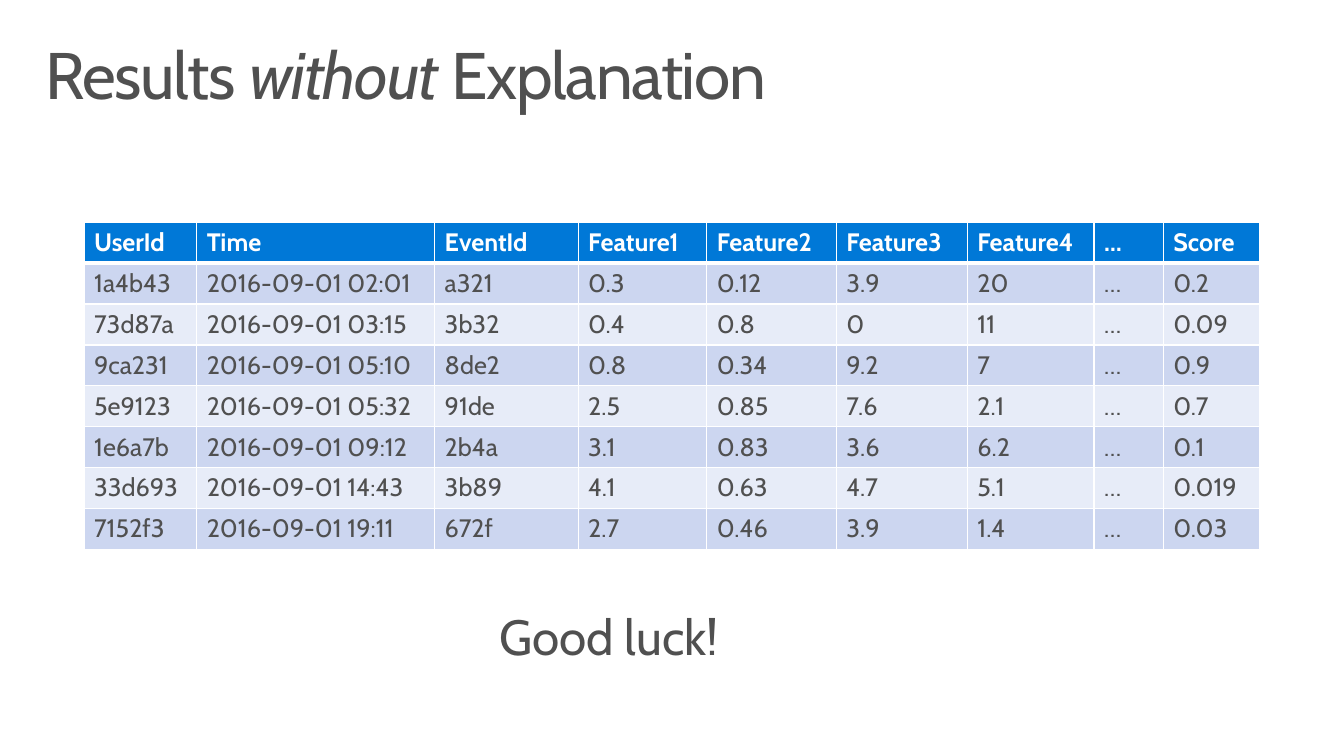
import pptx
import pptx.dml.color
import pptx.enum.text
import pptx.oxml.ns
import pptx.util
from lxml import etree

Pt = pptx.util.Pt
RGB = pptx.dml.color.RGBColor.from_string
qn = pptx.oxml.ns.qn

FONT = "Cabin"
COLORS = {"text": "505050", "header": "0078D7", "white": "FFFFFF",
          "band_dark": "CCD6F0", "band_light": "E7ECF8"}


def add_run(p, text, size, color="text", bold=False, italic=False):
    r = p.add_run()
    r.text = text
    r.font.name = FONT
    r.font.size = Pt(size)
    r.font.bold = bold
    r.font.italic = italic
    r.font.color.rgb = RGB(COLORS[color])
    return r


def set_placeholder(sp, left, top, width, height):
    """Place a placeholder and return its left-aligned first paragraph."""
    sp.left, sp.top, sp.width, sp.height = Pt(left), Pt(top), Pt(width), Pt(height)
    tf = sp.text_frame
    tf.word_wrap = True
    tf.auto_size = pptx.enum.text.MSO_AUTO_SIZE.NONE
    tf.vertical_anchor = pptx.enum.text.MSO_ANCHOR.TOP
    tf.margin_left = tf.margin_right = Pt(11.5)
    tf.margin_top = tf.margin_bottom = Pt(7.2)
    p = tf.paragraphs[0]
    p.alignment = pptx.enum.text.PP_ALIGN.LEFT
    p.line_spacing = 0.9
    p.space_before = Pt(0)
    return p


prs = pptx.Presentation()
prs.slide_width, prs.slide_height = Pt(960), Pt(540)
s = prs.slides.add_slide(prs.slide_layouts[1])

# Title
p = set_placeholder(s.shapes.title, 21, 23, 918, 70.5)
for text, italic in [("Results ", False), ("without", True), (" Explanation", False)]:
    r = add_run(p, text, 47, italic=italic)
    r.font._element.set("spc", "-100")

# Results table
rows = [
    ["UserId", "Time", "EventId", "Feature1", "Feature2", "Feature3", "Feature4", "…", "Score"],
    ["1a4b43", "2016-09-01 02:01", "a321", "0.3", "0.12", "3.9", "20", "…", "0.2"],
    ["73d87a", "2016-09-01 03:15", "3b32", "0.4", "0.8", "0", "11", "…", "0.09"],
    ["9ca231", "2016-09-01 05:10", "8de2", "0.8", "0.34", "9.2", "7", "…", "0.9"],
    ["5e9123", "2016-09-01 05:32", "91de", "2.5", "0.85", "7.6", "2.1", "…", "0.7"],
    ["1e6a7b", "2016-09-01 09:12", "2b4a", "3.1", "0.83", "3.6", "6.2", "…", "0.1"],
    ["33d693", "2016-09-01 14:43", "3b89", "4.1", "0.63", "4.7", "5.1", "…", "0.019"],
    ["7152f3", "2016-09-01 19:11", "672f", "2.7", "0.46", "3.9", "1.4", "…", "0.03"],
]
col_widths = [80.5, 170, 102.5, 92, 92.5, 93.5, 90.5, 49.5, 69]
row_height = 29.2

table = s.shapes.add_table(len(rows), len(col_widths), Pt(60), Pt(158.8),
                           Pt(sum(col_widths)), Pt(row_height * len(rows))).table
for col, width in zip(table.columns, col_widths):
    col.width = Pt(width)

for i, row in enumerate(rows):
    table.rows[i].height = Pt(row_height)
    fill = "header" if i == 0 else "band_dark" if i % 2 else "band_light"
    borders = {"lnL": 1, "lnR": 1, "lnT": 3 if i == 1 else 1, "lnB": 3 if i == 0 else 1}
    for j, text in enumerate(row):
        cell = table.cell(i, j)
        tcPr = cell._tc.get_or_add_tcPr()
        for side, width in borders.items():
            ln = etree.SubElement(tcPr, qn("a:" + side), w=str(Pt(width)))
            solid = etree.SubElement(ln, qn("a:solidFill"))
            etree.SubElement(solid, qn("a:srgbClr"), val=COLORS["white"])
        cell.fill.solid()
        cell.fill.fore_color.rgb = RGB(COLORS[fill])
        add_run(cell.text_frame.paragraphs[0], text, 18,
                "white" if i == 0 else "text", bold=i == 0)

# Closing remark
body = s.placeholders[1]
p = set_placeholder(body, 345, 430.5, 294, 53.5)
body.text_frame.auto_size = pptx.enum.text.MSO_AUTO_SIZE.SHAPE_TO_FIT_TEXT
pPr = p._p.get_or_add_pPr()
pPr.set("marL", "0")
pPr.set("indent", "0")
etree.SubElement(pPr, qn("a:buNone"))
add_run(p, "Good luck!", 35.3)

prs.save("out.pptx")
